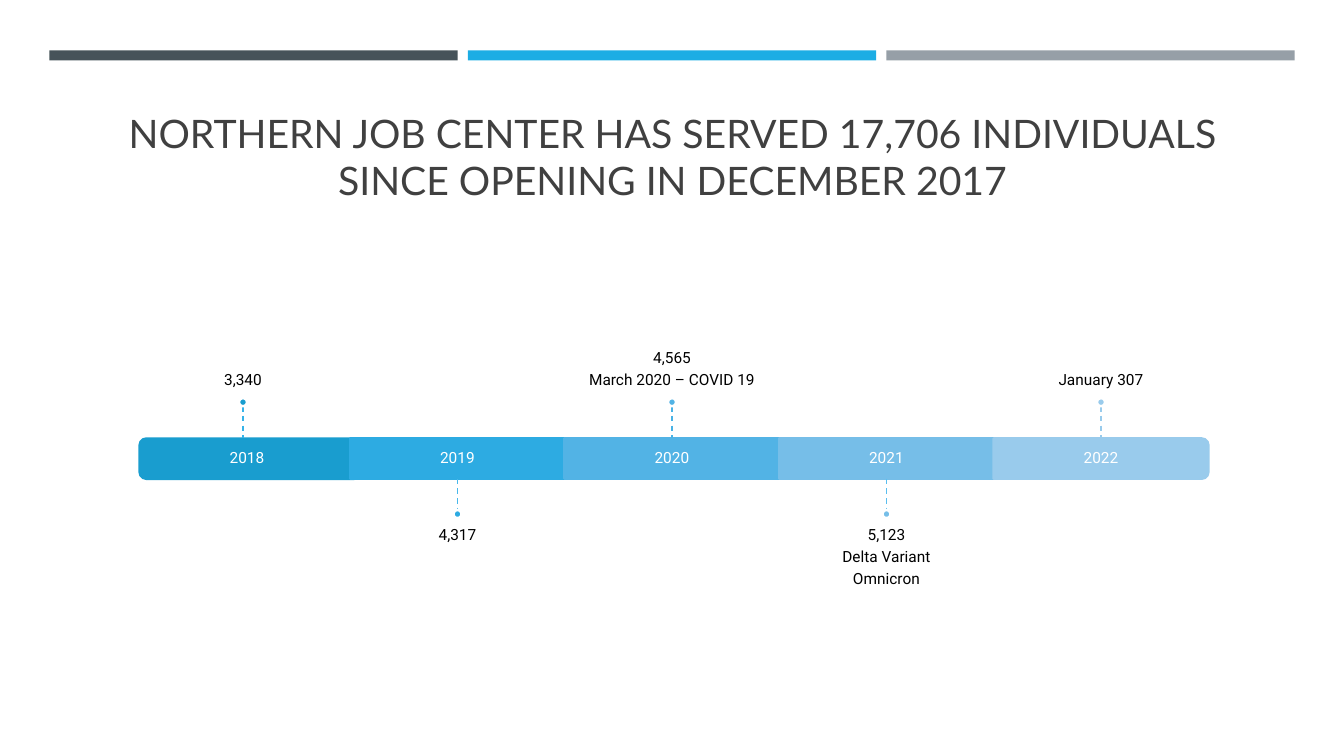
from dataclasses import dataclass

from pptx import Presentation
from pptx.dml.color import RGBColor
from pptx.enum.dml import MSO_LINE
from pptx.enum.shapes import MSO_CONNECTOR, MSO_SHAPE
from pptx.enum.text import MSO_ANCHOR, PP_ALIGN
from pptx.oxml.ns import qn
from pptx.shapes.autoshape import Shape
from pptx.util import Inches, Pt
from lxml.etree import SubElement

WHITE = RGBColor(0xFF, 0xFF, 0xFF)
BLACK = RGBColor(0x00, 0x00, 0x00)
TITLE_GRAY = RGBColor(0x40, 0x40, 0x40)
BAND_COLORS = (
    RGBColor(0x46, 0x53, 0x59),
    RGBColor(0x1C, 0xAD, 0xE4),
    RGBColor(0x96, 0x9F, 0xA7),
)

# Timeline geometry in inches
FIRST_CENTER, LAST_CENTER = 2.41, 10.92
BAR_TOP, BAR_HEIGHT, BLOCK_WIDTH = 4.35, 0.4, 2.13
BAR_BOTTOM = BAR_TOP + BAR_HEIGHT
DOT_SIZE = 0.08
NOTE_WIDTH, NOTE_HEIGHT = 3.55, 1.39
INSET = 0.09


@dataclass
class Year:
    label: str
    notes: tuple[str, ...]
    color: RGBColor
    stem_color: RGBColor
    rotation: int = 0  # rounded end blocks are turned on their side
    block_shift: float = 0


YEARS = (
    Year("2018", ("3,340",), RGBColor(0x19, 0x9D, 0xCF), RGBColor(0x36, 0xB3, 0xE9), 270, 0.04),
    Year("2019", ("4,317",), RGBColor(0x2D, 0xAB, 0xE2), RGBColor(0x48, 0xB8, 0xEC)),
    Year("2020", ("4,565", "March 2020 – COVID 19"),
         RGBColor(0x52, 0xB3, 0xE5), RGBColor(0x49, 0xB2, 0xE5)),
    Year("2021", ("5,123", "Delta Variant", "Omnicron"),
         RGBColor(0x76, 0xBE, 0xE8), RGBColor(0x5A, 0xBE, 0xEF)),
    Year("2022", ("January 307",), RGBColor(0x99, 0xCB, 0xEC), RGBColor(0x98, 0xCB, 0xEC), 90),
)

presentation = Presentation()
presentation.slide_width = Inches(13.33)
presentation.slide_height = Inches(7.5)
slide = presentation.slides.add_slide(presentation.slide_layouts[6])


def add_shape(kind: MSO_SHAPE, left: float, top: float, width: float, height: float,
              fill: RGBColor, line: RGBColor | None = None) -> Shape:
    shape = slide.shapes.add_shape(
        kind, Inches(left), Inches(top), Inches(width), Inches(height))
    shape.shadow.inherit = False
    shape.fill.solid()
    shape.fill.fore_color.rgb = fill
    if line is None:
        shape.line.fill.background()
    else:
        shape.line.color.rgb = line
        shape.line.width = Pt(1.75)
    return shape


def add_textbox(left: float, top: float, width: float, height: float) -> Shape:
    return slide.shapes.add_textbox(Inches(left), Inches(top), Inches(width), Inches(height))


def write_text(shape: Shape, lines: tuple[str, ...], color: RGBColor, anchor: MSO_ANCHOR,
               insets: tuple[float, float, float, float]) -> None:
    """Write centred timeline text; insets are left, top, right, bottom."""
    frame = shape.text_frame
    frame.word_wrap = True
    frame.vertical_anchor = anchor
    frame.margin_left, frame.margin_top, frame.margin_right, frame.margin_bottom = map(
        Inches, insets)
    frame.text = "\n".join(lines)
    for paragraph in frame.paragraphs:
        paragraph.alignment = PP_ALIGN.CENTER
        paragraph.line_spacing = 0.9
        paragraph.space_after = Pt(4)
        paragraph.font.name = "Roboto"
        paragraph.font.size = Pt(11)
        paragraph.font.color.rgb = color


def add_block(year: Year, center: float) -> Shape:
    middle = BAR_TOP + BAR_HEIGHT / 2
    left = center - BLOCK_WIDTH / 2
    if year.rotation:
        block = add_shape(MSO_SHAPE.ROUND_2_SAME_RECTANGLE, center - BAR_HEIGHT / 2,
                          middle - BLOCK_WIDTH / 2, BAR_HEIGHT, BLOCK_WIDTH,
                          year.color, year.color)
        block.rotation = year.rotation
        label = add_textbox(left, BAR_TOP, BLOCK_WIDTH, BAR_HEIGHT)
    else:
        block = label = add_shape(MSO_SHAPE.RECTANGLE, left, BAR_TOP, BLOCK_WIDTH, BAR_HEIGHT,
                                  year.color, year.color)
    write_text(label, (year.label,), WHITE, MSO_ANCHOR.MIDDLE, (INSET,) * 4)
    return block


def add_stem(year: Year, block: Shape, center: float, above: bool) -> None:
    top, bottom = (4.03, BAR_TOP) if above else (BAR_BOTTOM, 5.06)
    stem = slide.shapes.add_connector(
        MSO_CONNECTOR.STRAIGHT, Inches(center), Inches(top), Inches(center), Inches(bottom))
    if not year.rotation:
        if above:
            stem.end_connect(block, 0)
        else:
            stem.begin_connect(block, 2)
    stem.line.color.rgb = year.stem_color
    stem.line.width = Pt(1)
    stem.line.dash_style = MSO_LINE.DASH
    SubElement(stem._element.spPr, qn("a:effectLst"))


def add_year(index: int, year: Year) -> None:
    center = FIRST_CENTER + index * (LAST_CENTER - FIRST_CENTER) / (len(YEARS) - 1)
    above = index % 2 == 0
    block = add_block(year, center + year.block_shift)
    note = add_textbox(center - NOTE_WIDTH / 2, 2.56 if above else 5.14,
                       NOTE_WIDTH, NOTE_HEIGHT)
    if above:
        write_text(note, year.notes, BLACK, MSO_ANCHOR.BOTTOM, (0, 0, 0, INSET))
    else:
        write_text(note, year.notes, BLACK, MSO_ANCHOR.TOP, (0, INSET, 0, 0))
    add_stem(year, block, center, above)
    add_shape(MSO_SHAPE.OVAL, center - DOT_SIZE / 2, 3.95 if above else 5.06,
              DOT_SIZE, DOT_SIZE, year.color, WHITE)


# Bands across the top
for index, color in enumerate(BAND_COLORS):
    add_shape(MSO_SHAPE.RECTANGLE, 0.49 + index * 4.15, 0.5, 4.05, 0.1, color)

# Title
title = add_textbox(0.64, 0.77, 12.06, 1.3).text_frame
title.word_wrap = True
title.vertical_anchor = MSO_ANCHOR.BOTTOM
title.text = "NORTHERN JOB CENTER HAS SERVED 17,706 INDIVIDUALS SINCE OPENING IN DECEMBER 2017"
heading = title.paragraphs[0]
heading.alignment = PP_ALIGN.CENTER
heading.font.name = "Lato"
heading.font.size = Pt(28)
heading.font.color.rgb = TITLE_GRAY

# Timeline
for index, year in enumerate(YEARS):
    add_year(index, year)

presentation.save("out.pptx")
